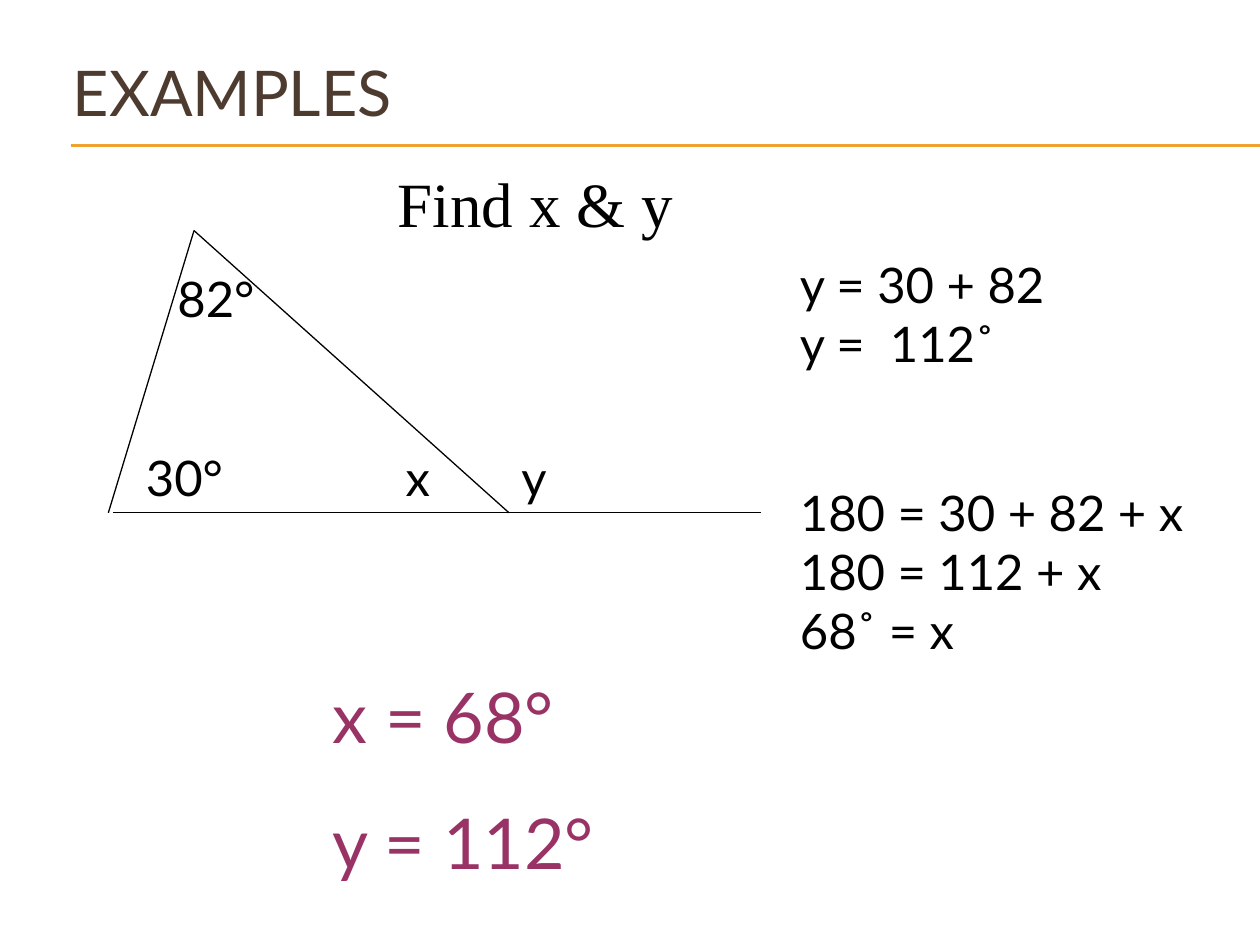
import pptx
import pptx.util
import pptx.dml.color
import pptx.enum.shapes
import pptx.enum.text
import pptx.oxml

Inches, Pt = pptx.util.Inches, pptx.util.Pt
HEX = {"gold": "F0A22E", "brown": "4E3B30", "ink": "000000", "plum": "993366"}

# Content: box (left, top, width, height), lines of text, format
TITLE = ((0.48, 0.1, 9, 1.25), ["EXAMPLES"])
PROMPT = ((3.06, 1.26, 2.43, 0.71), ["Find x & y"])
ANSWER = ((2.54, 5.3, 2.33, 1.78), ["x = 68°", "y = 112°"])
ANGLES = [
    ((3.12, 3.5, 0.58, 0.57), ["x"]),
    ((1.31, 2.08, 0.88, 0.57), ["82°"]),
    ((1.06, 3.5, 0.97, 0.57), ["30°"]),
    ((4.04, 3.5, 0.58, 0.57), ["y"]),
]
STEPS = [
    ((6.25, 1.97, 3.42, 1.04), ["y = 30 + 82", "y =  112˚"]),
    ((6.25, 3.78, 3.42, 1.51),
     ["180 = 30 + 82 + x", "180 = 112 + x", "68˚ = x"]),
]

# Triangle corners and the extended base
BASE = 4.07
APEX, LEFT, RIGHT = (1.54, 1.83), (0.86, BASE), (4.04, BASE)
SIDES = [(APEX, LEFT), ((0.9, BASE), (6.04, BASE)), (APEX, RIGHT)]
RULES = [((0.56, y), (10, y)) for y in (1.15, 1.16)]

deck = pptx.Presentation()
deck.slide_width, deck.slide_height = Inches(10), Inches(7.5)
slide = deck.slides.add_slide(deck.slide_layouts[6])


def color(name):
    return pptx.dml.color.RGBColor.from_string(HEX[name])


def add_line(start, end, tint):
    line = slide.shapes.add_connector(
        pptx.enum.shapes.MSO_CONNECTOR.STRAIGHT,
        *[Inches(v) for v in start + end])
    line.line.color.rgb = color(tint)
    line.line.width = Pt(0.75)
    line._element.spPr.append(pptx.oxml.parse_xml(
        '<a:effectLst xmlns:a='
        '"http://schemas.openxmlformats.org/drawingml/2006/main"/>'))


def add_text(box, lines, size=28, font="Lato", tint="ink", gap=0, middle=False):
    frame = slide.shapes.add_textbox(*[Inches(v) for v in box]).text_frame
    frame.word_wrap = True
    anchor = pptx.enum.text.MSO_ANCHOR
    frame.vertical_anchor = anchor.MIDDLE if middle else anchor.TOP
    for i, text in enumerate(lines):
        para = frame.add_paragraph() if i else frame.paragraphs[0]
        para.space_before = Pt(gap if i else 0)
        run = para.add_run()
        run.text = text
        run.font.size, run.font.name = Pt(size), font
        run.font.color.rgb = color(tint)


# Title and its rule
for start, end in RULES:
    add_line(start, end, "gold")
add_text(*TITLE, size=36, tint="brown", middle=True)

# Triangle with its angles
for start, end in SIDES:
    add_line(start, end, "ink")
for box, lines in ANGLES:
    add_text(box, lines)

# Prompt, answer and working
add_text(*PROMPT, size=36, font="Times New Roman")
add_text(*ANSWER, size=40, tint="plum", gap=24)
for box, lines in STEPS:
    add_text(box, lines)

deck.save("out.pptx")
